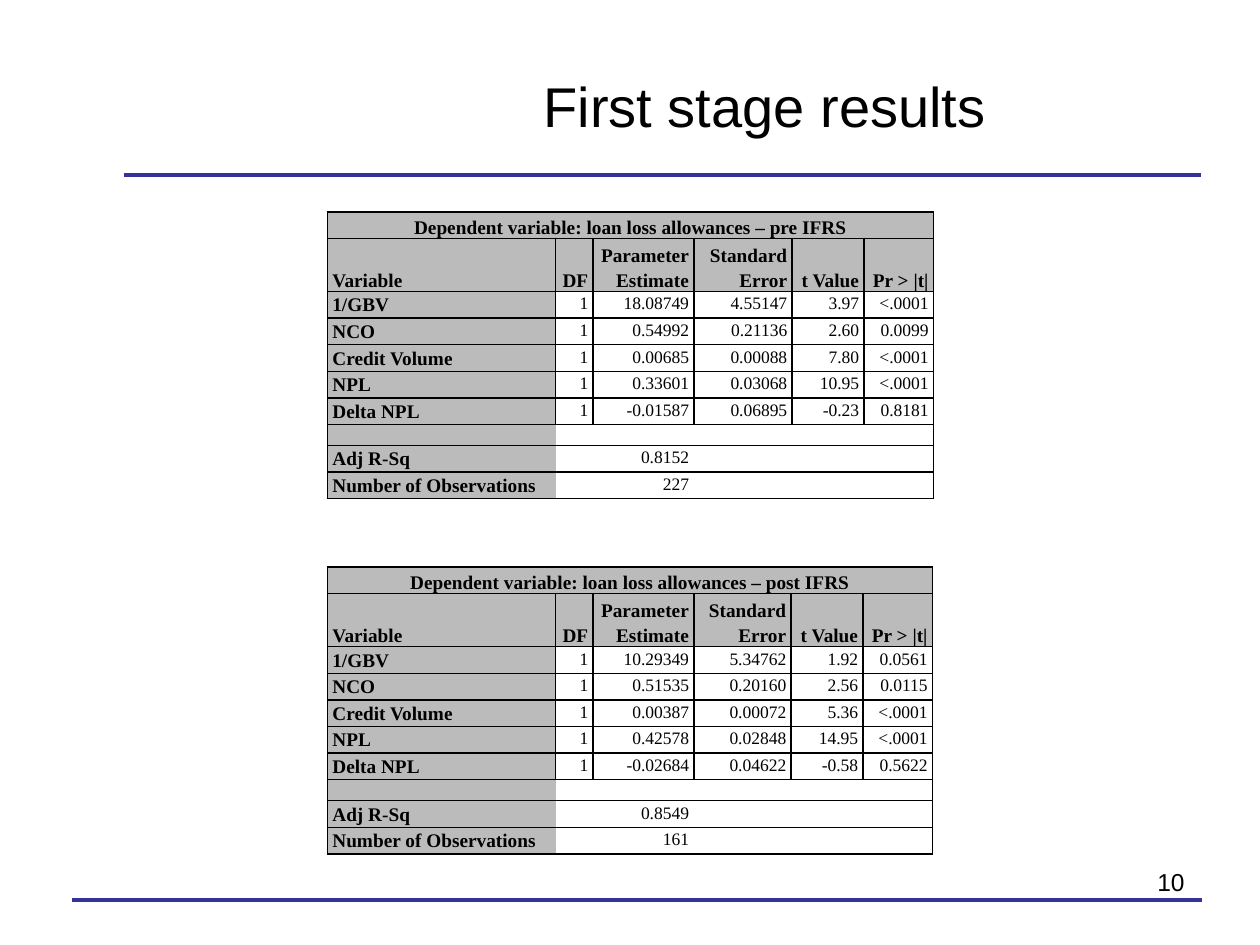
from lxml.etree import SubElement
from pptx import Presentation
from pptx.dml.color import RGBColor
from pptx.enum.shapes import MSO_CONNECTOR
from pptx.enum.text import MSO_ANCHOR as Anchor, PP_ALIGN as Align
from pptx.oxml.ns import qn
from pptx.util import Cm, Pt

COLORS = {"rule": "333399", "label": "BBBBBB", "ink": "000000"}
NO_STYLE = "{2D5ABB26-0587-4C30-8999-92F81FD0307C}"
HEADINGS = ["Variable", "DF", "Parameter\nEstimate", "Standard\nError", "t Value", "Pr > |t|"]
VARIABLES = ["1/GBV", "NCO", "Credit Volume", "NPL", "Delta NPL"]
BLANK_ROW = 2 + len(VARIABLES)
LAST_ROW = BLANK_ROW + 2
ROW_HEIGHTS = [0.49, 0.98] + [0.49] * len(VARIABLES) + [0.39, 0.49, 0.49]

PRE_IFRS = [
    ["18.08749", "4.55147", "3.97", "<.0001"],
    ["0.54992", "0.21136", "2.60", "0.0099"],
    ["0.00685", "0.00088", "7.80", "<.0001"],
    ["0.33601", "0.03068", "10.95", "<.0001"],
    ["-0.01587", "0.06895", "-0.23", "0.8181"],
]
POST_IFRS = [
    ["10.29349", "5.34762", "1.92", "0.0561"],
    ["0.51535", "0.20160", "2.56", "0.0115"],
    ["0.00387", "0.00072", "5.36", "<.0001"],
    ["0.42578", "0.02848", "14.95", "<.0001"],
    ["-0.02684", "0.04622", "-0.58", "0.5622"],
]


class SlideWriter:
    def __init__(self, page):
        self.page = page

    def color(self, name):
        return RGBColor.from_string(COLORS[name])

    def style(self, para, size, align, font="Arial", bold=False):
        para.alignment = align
        para.font.name = font
        para.font.size = Pt(size)
        para.font.bold = bold
        para.font.color.rgb = self.color("ink")

    def rule(self, left, right, y):
        line = self.page.shapes.add_connector(
            MSO_CONNECTOR.STRAIGHT, Cm(left), Cm(y), Cm(right), Cm(y))
        line.line.color.rgb = self.color("rule")
        line.line.width = Pt(2.25)
        SubElement(line._element.spPr, qn("a:effectLst"))

    def text(self, words, left, top, width, height, size, align, anchor):
        box = self.page.shapes.add_textbox(Cm(left), Cm(top), Cm(width), Cm(height))
        box.text_frame.word_wrap = True
        box.text_frame.vertical_anchor = anchor
        para = box.text_frame.paragraphs[0]
        para.text = words
        self.style(para, size, align)

    def borders(self, cell, sides):
        properties = cell._tc.get_or_add_tcPr()
        for side in "LRTB":
            if side in sides:
                line = SubElement(properties, qn(f"a:ln{side}"), w=str(Pt(1)))
                fill = SubElement(line, qn("a:solidFill"))
                SubElement(fill, qn("a:srgbClr"), val=COLORS["ink"])

    def cell(self, cell, words, sides, header, label, align):
        cell.margin_left = cell.margin_right = Cm(0.1)
        cell.margin_top = cell.margin_bottom = 0
        cell.vertical_anchor = Anchor.BOTTOM if header else Anchor.TOP
        self.borders(cell, sides)
        if label:
            cell.fill.solid()
            cell.fill.fore_color.rgb = self.color("label")
        else:
            cell.fill.background()
        para = cell.text_frame.paragraphs[0]
        para.text = words
        if words:
            para.line_spacing = 1.15
            self.style(para, 11 if label else 10, align, "Times New Roman", label)
        else:
            SubElement(para._p, qn("a:endParaRPr"), sz="1000")

    def sides(self, row, column, last_column):
        if row < BLANK_ROW:
            return "LRTB"
        found = "L" if column == 0 else "R" if column == last_column else ""
        found += "T" if row < LAST_ROW else ""
        return found + ("B" if row != LAST_ROW - 1 else "")

    def table(self, rows, left, top, widths):
        frame = self.page.shapes.add_table(
            len(rows), len(widths), Cm(left), Cm(top), Cm(sum(widths)), Cm(sum(ROW_HEIGHTS)))
        table = frame.table
        table.first_row = table.horz_banding = False
        table._tbl.tblPr.find(qn("a:tableStyleId")).text = NO_STYLE
        for column, width in zip(table.columns, widths):
            column.width = Cm(width)
        for row, height in zip(table.rows, ROW_HEIGHTS):
            row.height = Cm(height)
        for r, row in enumerate(rows):
            for c, words in enumerate(row):
                align = Align.CENTER if r == 0 else Align.LEFT if c == 0 else Align.RIGHT
                self.cell(table.cell(r, c), words, self.sides(r, c, len(widths) - 1),
                          r < 2, r < 2 or c == 0, align)
        table.cell(0, 0).merge(table.cell(0, len(widths) - 1))


def result_rows(period, estimates, fit, count):
    rows = [[f"Dependent variable: loan loss allowances – {period} IFRS"], HEADINGS]
    rows += [[name, "1"] + values for name, values in zip(VARIABLES, estimates)]
    rows += [[], ["Adj R-Sq", "", fit], ["Number of Observations", "", count]]
    return [row + [""] * (len(HEADINGS) - len(row)) for row in rows]


def main():
    deck = Presentation()
    deck.slide_width, deck.slide_height = Cm(25.4), Cm(19.05)
    writer = SlideWriter(deck.slides.add_slide(deck.slide_layouts[6]))
    writer.rule(2.49, 24.21, 3.53)
    writer.rule(1.45, 24.23, 18.14)
    writer.text("10", 18.21, 17.35, 5.92, 1.32, 14, Align.RIGHT, Anchor.TOP)
    writer.text("First stage results", 6.71, 0.53, 17.42, 3.18, 32, Align.CENTER, Anchor.MIDDLE)
    writer.table(result_rows("pre", PRE_IFRS, "0.8152", "227"),
                 6.6, 4.27, [4.6, 0.76, 2.03, 1.98, 1.45, 1.4])
    writer.table(result_rows("post", POST_IFRS, "0.8549", "161"),
                 6.6, 11.43, [4.6, 0.76, 2.03, 1.96, 1.45, 1.4])
    deck.save("out.pptx")


if __name__ == "__main__":
    main()
